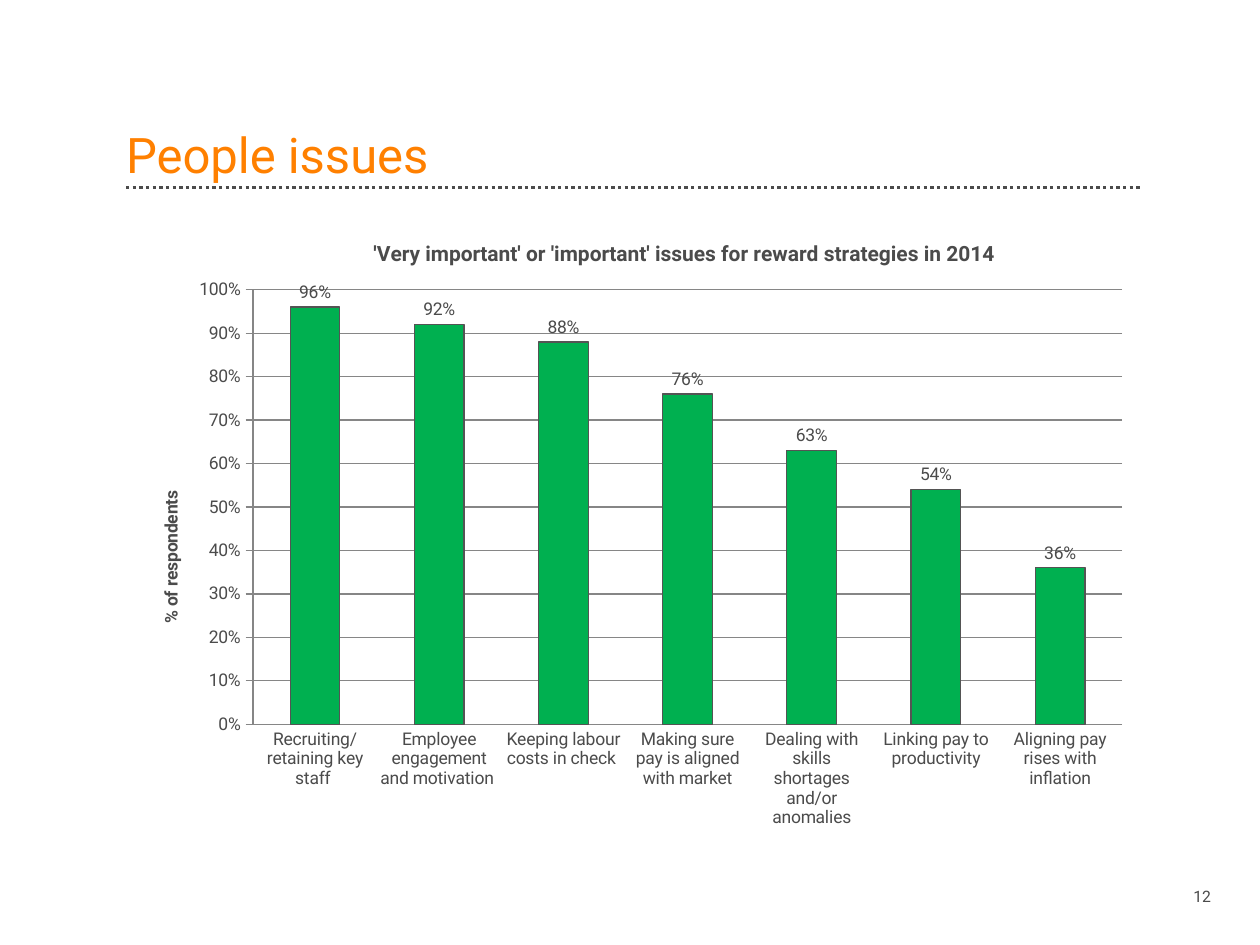
from lxml import etree
from pptx import Presentation
from pptx.chart.data import CategoryChartData as Data
from pptx.dml.color import RGBColor as Rgb
from pptx.enum.chart import XL_CHART_TYPE as Kind, XL_LABEL_POSITION as Spot, XL_TICK_MARK as Tick
from pptx.enum.dml import MSO_LINE as Dash
from pptx.enum.shapes import MSO_CONNECTOR as Link
from pptx.enum.text import MSO_ANCHOR as Anchor, MSO_AUTO_SIZE as Fit, PP_ALIGN as Align
from pptx.oxml import parse_xml
from pptx.oxml.ns import nsdecls, qn
from pptx.util import Inches, Pt

FONT = "Roboto"
COLORS = {"title": "FF8000", "text": "4B4B4B", "bar": "00B050", "edge": "545454", "grid": "868686"}
TITLE = "People issues"
HEAD = "'Very important' or 'important' issues for reward strategies in 2014"
UNIT = "% of respondents"
PAGE = "12"
ISSUES = [
    ("Recruiting/retaining key staff ", 0.96),
    ("Employee engagement and motivation ", 0.92),
    ("Keeping labour costs in check ", 0.88),
    ("Making sure pay is aligned with market", 0.76),
    ("Dealing with skills shortages and/or anomalies", 0.63),
    ("Linking pay to productivity", 0.54),
    ("Aligning pay rises with inflation", 0.36),
]
LEFT, WIDTH = 1, 8.06


def color(name):
    return Rgb.from_string(COLORS[name])


def style(font, size, name="text", bold=False):
    font.name, font.size, font.bold = FONT, Pt(size), bold
    font.color.rgb = color(name)


def stroke(line, name, width=0.75):
    line.color.rgb = color(name)
    line.width = Pt(width)


def place(node, index, **parts):
    for old in node.findall(qn("c:layout")):
        node.remove(old)
    rows = ['<c:layoutTarget val="inner"/>'] if "w" in parts else []
    rows += [f'<c:{key}Mode val="edge"/>' for key in "xy"]
    rows += [f'<c:{key} val="{val}"/>' for key, val in parts.items()]
    body = "".join(rows)
    node.insert(index, parse_xml(
        f'<c:layout {nsdecls("c")}><c:manualLayout>{body}</c:manualLayout></c:layout>'))


def label(title, text, size):
    title.text_frame.text = text
    style(title.text_frame.paragraphs[0].runs[0].font, size, bold=True)


def add_title(slide):
    title = slide.shapes.title
    title.left, title.top = Inches(LEFT), Inches(0.55)
    title.width, title.height = Inches(WIDTH), Inches(0.91)
    frame = title.text_frame
    frame.text = TITLE
    frame.auto_size = Fit.NONE
    frame.vertical_anchor = Anchor.BOTTOM
    frame.margin_left = frame.margin_right = frame.margin_top = frame.margin_bottom = 0
    par = frame.paragraphs[0]
    par.alignment, par.line_spacing = Align.LEFT, 0.9
    style(par.runs[0].font, 28, "title")


def add_rule(slide):
    rule = slide.shapes.add_connector(
        Link.STRAIGHT, Inches(LEFT), Inches(1.49), Inches(LEFT + WIDTH), Inches(1.49))
    stroke(rule.line, "text", 1.9)
    rule.line.dash_style = Dash.ROUND_DOT
    etree.SubElement(rule._element.spPr, qn("a:effectLst"))


def add_page(slide):
    box = slide.shapes.add_textbox(Inches(9.21), Inches(6.99), Inches(0.5), Inches(0.25))
    frame = box.text_frame
    frame.word_wrap = True
    frame.text = PAGE
    par = frame.paragraphs[0]
    par.alignment = Align.RIGHT
    style(par.runs[0].font, 9)


def add_bars(slide):
    data = Data(number_format="0%")
    data.categories = [name for name, _ in ISSUES]
    data.add_series("Series 1", [share for _, share in ISSUES])
    chart = slide.shapes.add_chart(
        Kind.COLUMN_CLUSTERED, Inches(LEFT), Inches(1.67), Inches(WIDTH), Inches(5), data).chart
    style(chart.font, 10)
    chart.has_legend = False
    chart.has_title = True
    label(chart.chart_title, HEAD, 12)
    place(chart.chart_title._element, 1, x=0.24, y=0.04)

    plot = chart.plots[0]
    plot.gap_width, plot.vary_by_categories = 150, False
    place(chart._chartSpace.find(".//" + qn("c:plotArea")), 0, x=0.125, y=0.126, w=0.856, h=0.69)
    plot.has_data_labels = True
    tags = plot.data_labels
    tags.show_value, tags.position = True, Spot.OUTSIDE_END
    tags.number_format, tags.number_format_is_linked = "0%", False
    style(tags.font, 10)
    bars = plot.series[0].format
    bars.fill.solid()
    bars.fill.fore_color.rgb = color("bar")
    stroke(bars.line, "edge")

    cats, vals = chart.category_axis, chart.value_axis
    for axis in (cats, vals):
        stroke(axis.format.line, "grid")
        style(axis.tick_labels.font, 10)
        axis.minor_tick_mark = Tick.NONE
    cats.major_tick_mark, vals.major_tick_mark = Tick.NONE, Tick.CROSS
    vals.minimum_scale, vals.maximum_scale, vals.major_unit = 0, 1, 0.1
    vals.tick_labels.number_format = "0%"
    vals.tick_labels.number_format_is_linked = False
    vals.has_major_gridlines = True
    stroke(vals.major_gridlines.format.line, "grid")
    vals.has_title = True
    label(vals.axis_title, UNIT, 10)
    vals.axis_title.text_frame._txBody.bodyPr.set("rot", "-5400000")
    place(vals.axis_title._element, 1, x=0.03, y=0.44)


def main():
    deck = Presentation()
    deck.slide_width, deck.slide_height = Inches(10), Inches(7.5)
    slide = deck.slides.add_slide(deck.slide_layouts[5])
    for add in (add_rule, add_title, add_page, add_bars):
        add(slide)
    deck.save("out.pptx")


if __name__ == "__main__":
    main()
